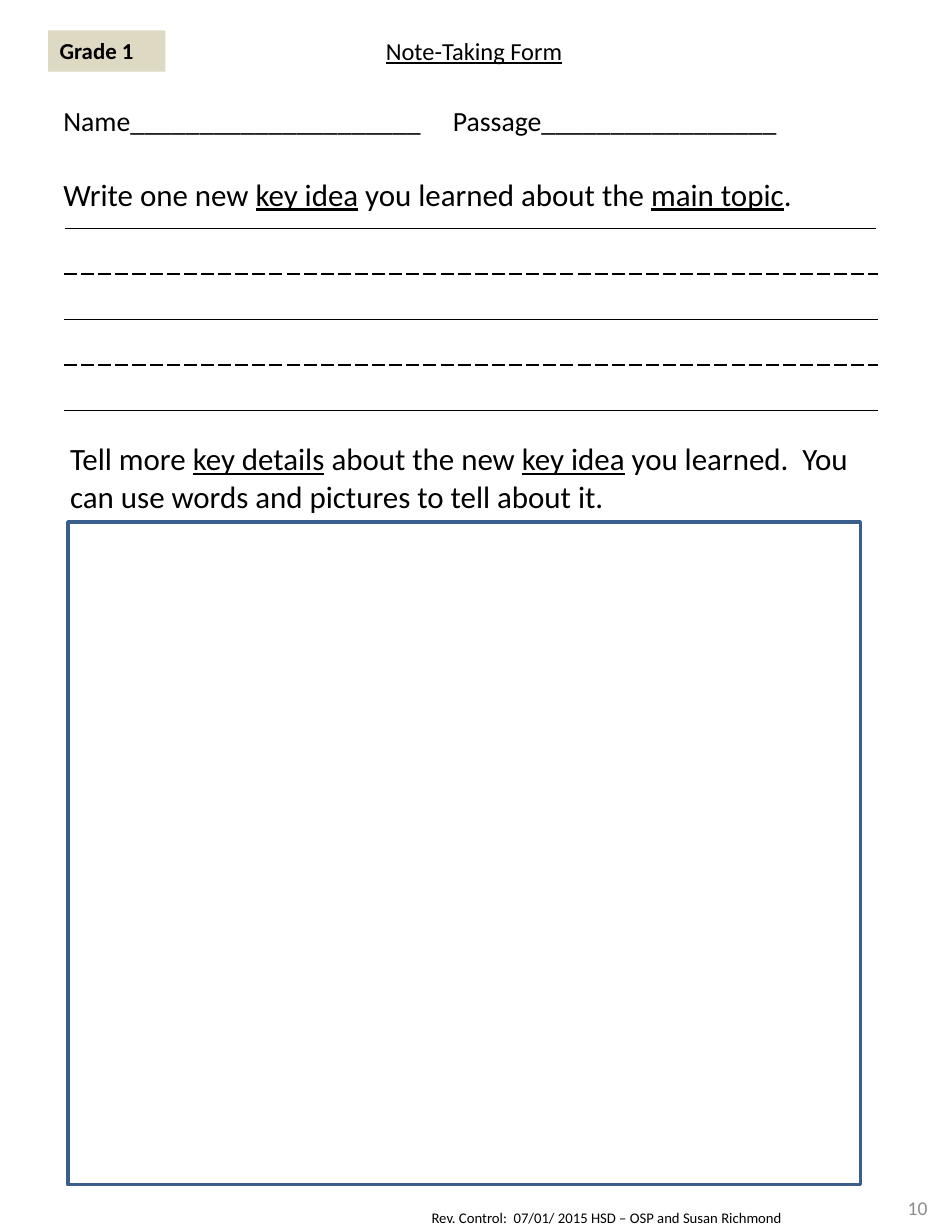
"""Build a Grade 1 note-taking form on a portrait page."""
from dataclasses import dataclass

from lxml import etree
from pptx import Presentation
from pptx.dml.color import RGBColor
from pptx.enum.shapes import MSO_SHAPE
from pptx.enum.text import MSO_ANCHOR, PP_ALIGN
from pptx.oxml import parse_xml
from pptx.oxml.ns import nsdecls, qn
from pptx.util import Cm, Pt

RECT = MSO_SHAPE.RECTANGLE
LEFT, CENTER, RIGHT = PP_ALIGN.LEFT, PP_ALIGN.CENTER, PP_ALIGN.RIGHT
TOP, MIDDLE = MSO_ANCHOR.TOP, MSO_ANCHOR.MIDDLE


@dataclass(frozen=True)
class Theme:
    font: str = "Calibri"
    ink: str = "000000"
    muted: str = "8C8C8C"
    paper: str = "FFFFFF"
    tag: str = "DDD9C3"
    frame: str = "3A5F8C"
    prompt: int = 19
    field: int = 17
    title: int = 15
    label: int = 14
    number: int = 12
    footer: int = 9


THEME = Theme()


def rgb(color):
    return RGBColor.from_string(color)


def write(tf, parts, size, color=THEME.ink, bold=False, align=LEFT, anchor=TOP):
    """Fill a frame with (text, underlined) parts in one paragraph."""
    tf.word_wrap = True
    tf.vertical_anchor = anchor
    p = tf.paragraphs[0]
    p.alignment = align
    for text, underlined in parts:
        r = p.add_run()
        r.text = text
        r.font.name = THEME.font
        r.font.size = Pt(size)
        r.font.bold = bold
        r.font.underline = underlined
        r.font.color.rgb = rgb(color)
    return p


def add_text(s, box, parts, size, **fmt):
    sp = s.shapes.add_textbox(*map(Cm, box))
    return write(sp.text_frame, parts, size, **fmt)


def add_box(s, box, fill=None, line=None):
    sp = s.shapes.add_shape(RECT, *map(Cm, box))
    sp.shadow.inherit = False
    if fill:
        sp.fill.solid()
        sp.fill.fore_color.rgb = rgb(fill)
    else:
        sp.fill.background()
    if line:
        sp.line.color.rgb = rgb(line)
        sp.line.width = Pt(2)
    else:
        sp.line.fill.background()
    return sp


def add_tab_stop(p, pos):
    tabs = etree.SubElement(p._p.get_or_add_pPr(), qn("a:tabLst"))
    etree.SubElement(tabs, qn("a:tab"), pos=str(Cm(pos)), algn="l")


def set_border(cell, side, dash):
    ln = parse_xml(
        f'<a:ln{side} {nsdecls("a")} w="{Pt(1)}"><a:solidFill>'
        f'<a:srgbClr val="{THEME.ink}"/></a:solidFill>'
        f'<a:prstDash val="{dash}"/></a:ln{side}>')
    cell._tc.get_or_add_tcPr().append(ln)


def add_writing_lines(s, box, rows):
    """Rule a table with solid lines and dashed midlines."""
    table = s.shapes.add_table(rows, 1, *map(Cm, box)).table
    table.first_row = table.horz_banding = False
    for i in range(rows):
        cell = table.cell(i, 0)
        cell.margin_top = cell.margin_bottom = 0
        edges = ("solid", "sysDash") if i % 2 == 0 else ("sysDash", "solid")
        for side, dash in zip("TB", edges):
            set_border(cell, side, dash)
        cell.fill.solid()
        cell.fill.fore_color.rgb = rgb(THEME.paper)


def main():
    prs = Presentation()
    prs.slide_width, prs.slide_height = Cm(20.32), Cm(26.67)
    s = prs.slides.add_slide(prs.slide_layouts[6])

    add_text(s, (9.09, 26.04, 10.16, 0.63),
             [("Rev. Control:  07/01/ 2015 HSD – OSP and Susan Richmond", False)],
             THEME.footer)
    add_text(s, (18.11, 25.6, 2.21, 1.07), [("10", False)], THEME.number,
             color=THEME.muted, align=RIGHT, anchor=MIDDLE)

    add_writing_lines(s, (1.4, 4.95, 17.58, 3.94), 4)

    fields = add_text(s, (1.12, 2.12, 17.78, 1),
                      [("Name" + "_" * 21 + "\tPassage" + "_" * 17, False)],
                      THEME.field)
    add_tab_stop(fields, 8.43)
    add_text(s, (1.12, 3.67, 17.78, 1.07),
             [("Write one new ", False), ("key idea", True),
              (" you learned about the ", False), ("main topic", True),
              (".", False)], THEME.prompt)
    add_text(s, (1.27, 9.4, 17.78, 1.88),
             [("Tell more ", False), ("key details", True),
              (" about the new ", False), ("key idea", True),
              (" you learned.  You can use words and pictures to tell about it.",
               False)], THEME.prompt)
    add_box(s, (1.47, 11.3, 17.15, 14.35), line=THEME.frame)

    tag = add_box(s, (1.04, 0.66, 2.54, 0.89), fill=THEME.tag)
    write(tag.text_frame, [("Grade 1", False)], THEME.label, bold=True)
    add_text(s, (5.28, 0.66, 9.96, 0.89), [("Note-Taking Form", True)],
             THEME.title, align=CENTER)

    prs.save("out.pptx")


if __name__ == "__main__":
    main()
